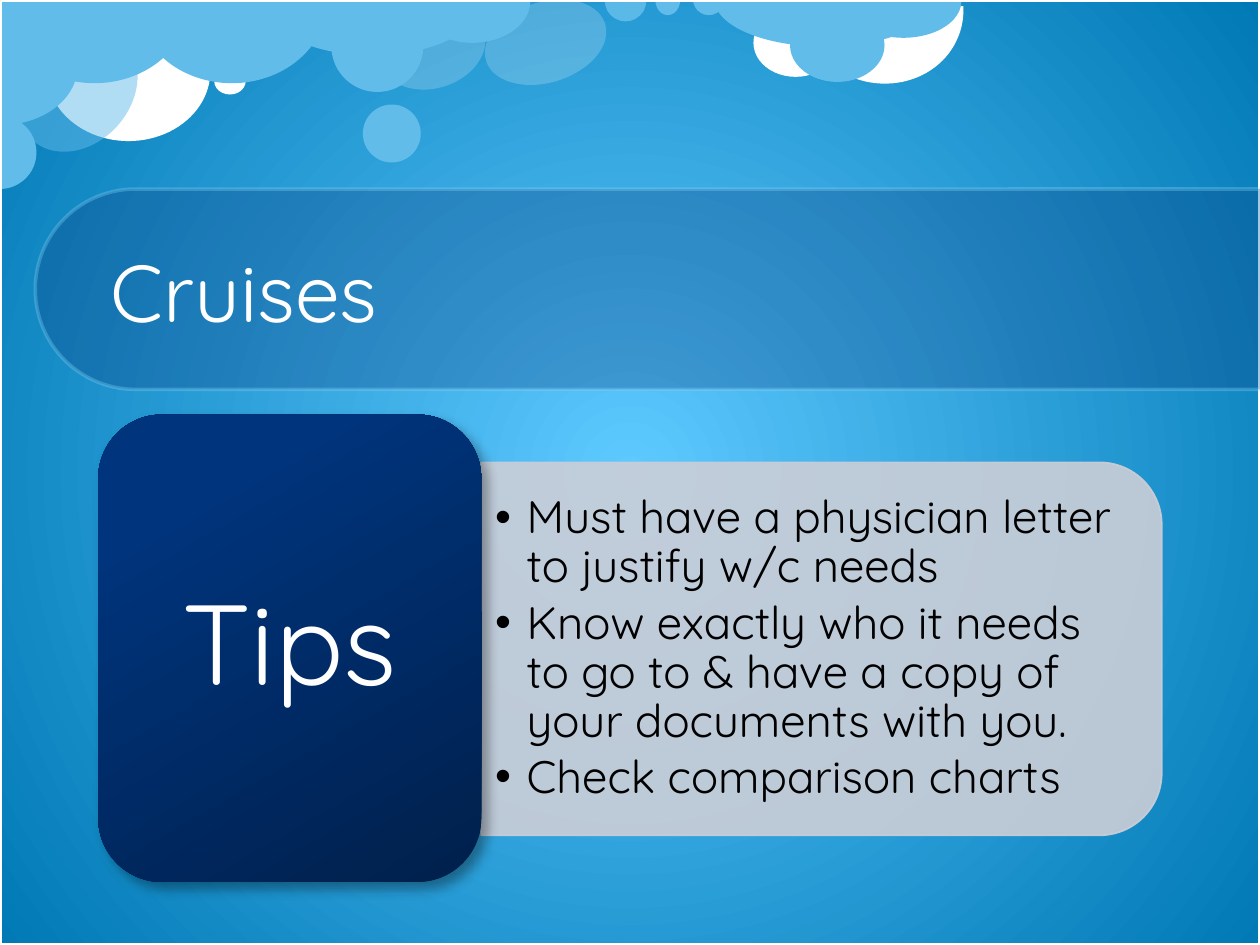
from lxml import etree
from pptx import Presentation
from pptx.dml.color import RGBColor
from pptx.enum.shapes import MSO_SHAPE as Kind
from pptx.enum.text import MSO_ANCHOR as Anchor, MSO_AUTO_SIZE as AutoSize, PP_ALIGN as Align
from pptx.oxml.ns import qn
from pptx.util import Inches, Pt

FONT = "Quicksand"
WHITE = RGBColor(0xFF, 0xFF, 0xFF)
BLACK = RGBColor(0, 0, 0)
SKY_LIGHT = RGBColor(0x5D, 0xC9, 0xFF)
SKY_DARK = RGBColor(0x00, 0x79, 0xB5)
CLOUD = RGBColor(0x62, 0xBC, 0xE9)
PALE = RGBColor(0x8F, 0xD9, 0xFB)
BANNER = RGBColor(0x07, 0x37, 0x79)
PANEL = RGBColor(0xCC, 0xCE, 0xD7)
NAVY_DARK = RGBColor(0x00, 0x20, 0x4C)
NAVY = RGBColor(0x00, 0x34, 0x7C)

HALF = (0, 108)  # pie angles for the lower half of an ellipse
# kind, box, rotation, adjustments, colour, opacity; back to front
CLOUDS = [
    (Kind.OVAL, (3.11, -0.05, 0.64, 0.86), 72.8, (), WHITE, 20),
    (Kind.OVAL, (0.37, 0.01, 1.3, 1.11), 0, (), WHITE, 100),
    (Kind.ARC, (6.39, -0.6, 1.21, 1.31), 106.5, (151.8, 44.48), WHITE, 100),
    (Kind.OVAL, (5.98, 0.07, 0.67, 0.54), 0, (), WHITE, 100),
    (Kind.PIE, (-0.01, -0.66, 1.52, 1.32), 0, HALF, CLOUD, 100),
    (Kind.PIE, (2.08, -0.44, 1.75, 0.88), 0, HALF, CLOUD, 100),
    (Kind.OVAL, (2.88, 0.83, 0.46, 0.46), 0, (), CLOUD, 100),
    (Kind.OVAL, (0.19, 0.18, 0.85, 1.07), 41.8, (), CLOUD, 50),
    (Kind.PIE, (-0.29, 0.92, 0.58, 0.58), 270, HALF, CLOUD, 100),
    (Kind.OVAL, (1.7, 0.54, 0.25, 0.21), 0, (), WHITE, 100),
    (Kind.PIE, (1.08, -0.66, 1.52, 1.32), 0, HALF, CLOUD, 100),
    (Kind.PIE, (5.67, -0.38, 1.75, 0.75), 0, HALF, CLOUD, 100),
    (Kind.OVAL, (6.27, 0.07, 0.75, 0.58), 0, (), CLOUD, 100),
    (Kind.PIE, (6.71, -0.28, 0.92, 0.58), 0, HALF, CLOUD, 100),
    (Kind.OVAL, (4.01, -0.16, 0.64, 0.99), 72.8, (), WHITE, 20),
    (Kind.PIE, (4.8, -0.16, 0.33, 0.33), 0, HALF, PALE, 50),
    (Kind.PIE, (5.2, -0.13, 0.2, 0.25), 0, HALF, CLOUD, 100),
    (Kind.PIE, (5.5, -0.13, 0.25, 0.25), 0, HALF, CLOUD, 100),
    (Kind.OVAL, (2.63, 0, 0.73, 0.73), 0, (), CLOUD, 100),
    (Kind.PIE, (3.29, -0.33, 0.92, 0.67), 0, HALF, CLOUD, 100),
    (Kind.PIE, (-0.47, -0.09, 0.93, 1.24), 270, HALF, CLOUD, 100),
]

TIPS = [
    "Must have a physician letter to justify w/c needs",
    "Know exactly who it needs to go to & have a copy of your documents with you.",
    "Check comparison charts",
]


def sub(parent, tag, **attributes):
    return etree.SubElement(parent, qn(tag), {k: str(v) for k, v in attributes.items()})


def paint(fill, color, opacity=100):
    fill.solid()
    fill.fore_color.rgb = color
    if opacity < 100:
        solid = fill._xPr.find(qn("a:solidFill"))
        sub(solid[0], "a:alpha", val=opacity * 1000)


def blend(fill, stops):
    fill.gradient()
    for stop, (position, color) in zip(fill.gradient_stops, stops):
        stop.position = position
        stop.color.rgb = color


def add_part(page, kind, box, color=None, opacity=100, line=None, width=1,
             rotation=0, adjustments=()):
    part = page.shapes.add_shape(kind, *map(Inches, box))
    part.shadow.inherit = False
    part.rotation = rotation
    for index, value in enumerate(adjustments):
        part.adjustments[index] = value
    if color is None:
        part.fill.background()
    else:
        paint(part.fill, color, opacity)
    if line is None:
        part.line.fill.background()
    else:
        part.line.width = Pt(width)
        paint(part.line.fill, line, opacity)
    return part


def add_tab(page, box, rotation, **style):
    """A bar rounded at one end; the box is as seen after a quarter turn."""
    left, top, width, height = box
    turned = (left + (width - height) / 2, top + (height - width) / 2, height, width)
    return add_part(page, Kind.ROUND_2_SAME_RECTANGLE, turned, rotation=rotation, **style)


def place(holder, box):
    """Move a placeholder to its box, in front of what is already drawn."""
    holder.left, holder.top, holder.width, holder.height = map(Inches, box)
    holder.element.getparent().append(holder.element)


def write(shape, texts, size, color, align=Align.LEFT, spacing=0.9, after=0,
          insets=(0.1, 0.05), bullet=None):
    frame = shape.text_frame
    frame.word_wrap = True
    frame.auto_size = AutoSize.NONE
    frame.vertical_anchor = Anchor.MIDDLE
    frame.margin_left = frame.margin_right = Inches(insets[0])
    frame.margin_top = frame.margin_bottom = Inches(insets[1])
    for index, text in enumerate(texts):
        para = frame.add_paragraph() if index else frame.paragraphs[0]
        para.alignment = align
        para.line_spacing = spacing
        para.space_before = Pt(0)
        para.space_after = Pt(after)
        if bullet:
            props = para._p.get_or_add_pPr()
            props.set("marL", str(Inches(0.25)))
            props.set("indent", str(-Inches(0.25)))
            sub(props, "a:buChar", char=bullet)
        span = para.add_run()
        span.text = text
        span.font.name = FONT
        span.font.size = Pt(size)
        span.font.color.rgb = color


def draw_sky(page, box):
    fill = page.background.fill
    blend(fill, [(0, SKY_LIGHT), (1, SKY_DARK)])
    gradient = page.background._cSld.find(".//" + qn("a:gradFill"))
    gradient.remove(gradient.find(qn("a:lin")))
    center = sub(gradient, "a:path", path="circle")
    sub(center, "a:fillToRect", l=50000, t=50000, r=50000, b=50000)
    for kind, cloud_box, rotation, adjustments, color, opacity in CLOUDS:
        add_part(page, kind, cloud_box, color, opacity,
                 rotation=rotation, adjustments=adjustments)
    add_part(page, Kind.RECTANGLE, box, line=WHITE, width=2)


def draw_banner(page, box):
    left, top, width, height = box
    add_tab(page, box, 270, color=BANNER, opacity=30, line=PALE, width=2,
            adjustments=(0.5, 0))
    place(page.shapes.title, (left + 0.5, top, 8.44, height))
    write(page.shapes.title, ["Cruises"], 46, WHITE, spacing=Pt(56))


def draw_tips(page, box):
    left, top, width, height = box
    card_width = 3.04
    panel_left, panel_width = left + card_width, width - card_width

    # Grey panel with the list
    add_tab(page, (panel_left, top + 0.38, panel_width, 2.96), 90,
            color=PANEL, opacity=90, line=PANEL)
    body = page.placeholders[1]
    place(body, (panel_left, top + 0.52, panel_width - 0.14, 2.68))
    write(body, TIPS, 26, BLACK, after=4, insets=(0.11, 0.05), bullet="•")

    # Navy card with its shadow
    card = add_part(page, Kind.ROUNDED_RECTANGLE, (left, top, card_width, height), NAVY)
    blend(card.fill, [(0, NAVY_DARK), (0.8, NAVY)])
    card.fill.gradient_angle = 120
    effects = card._element.spPr.find(qn("a:effectLst"))
    shadow = sub(effects, "a:outerShdw", blurRad=Pt(7), dist=Pt(5),
                 dir=50 * 60000, rotWithShape=0)
    sub(sub(shadow, "a:srgbClr", val=BLACK), "a:alpha", val=35000)
    write(card, ["Tips"], 65, WHITE, align=Align.CENTER, insets=(0.27, 0.14))


def main():
    deck = Presentation()
    deck.slide_width, deck.slide_height = Inches(10), Inches(7.5)
    page = deck.slides.add_slide(deck.slide_layouts[1])
    draw_sky(page, (0, 0, 10, 7.5))
    draw_banner(page, (0.28, 1.5, 9.72, 1.59))
    draw_tips(page, (0.78, 3.29, 8.44, 3.71))
    deck.save("out.pptx")


if __name__ == "__main__":
    main()
